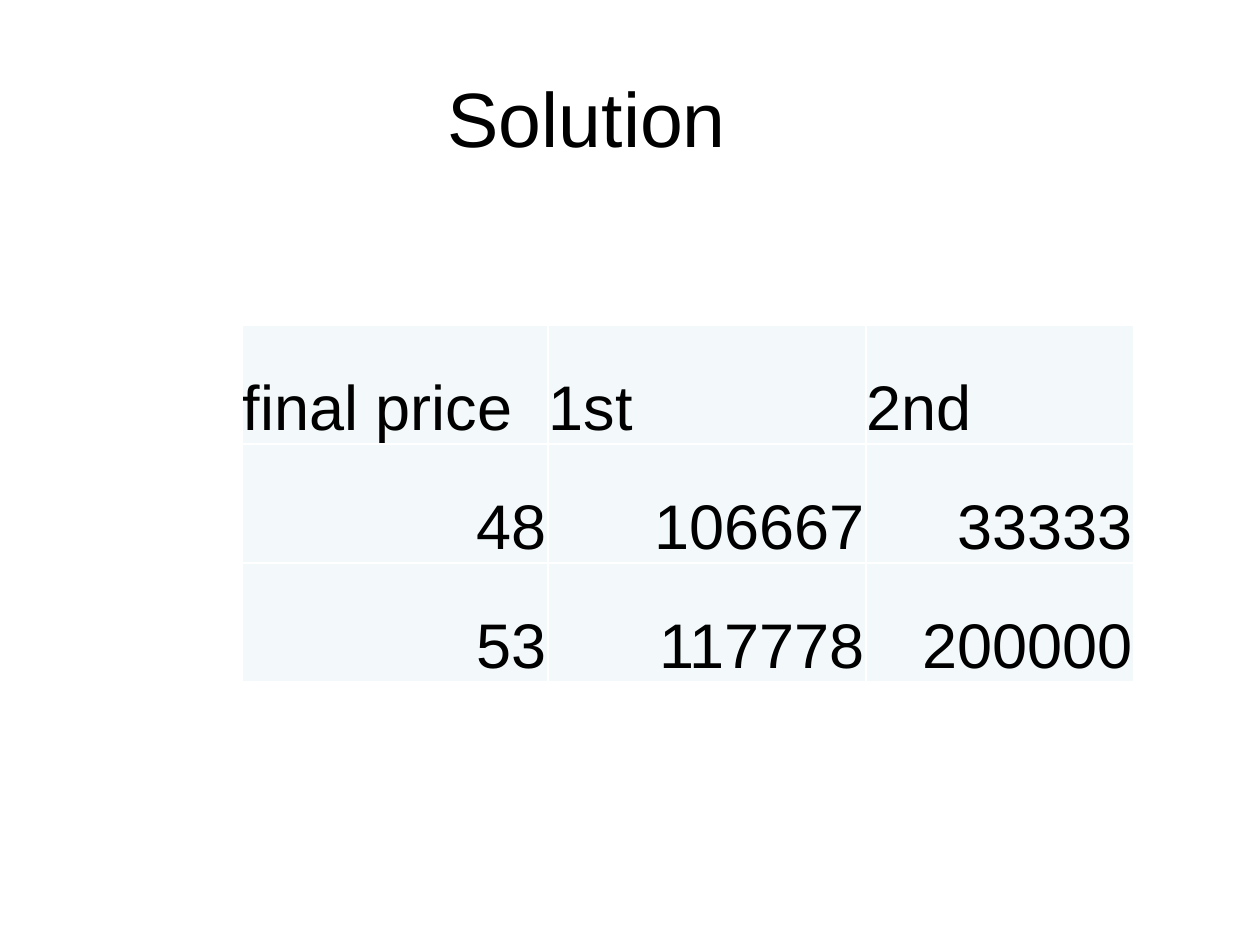
from dataclasses import dataclass

from lxml import etree
from pptx import Presentation
from pptx.dml.color import RGBColor
from pptx.enum.text import MSO_ANCHOR, PP_ALIGN
from pptx.oxml.ns import qn
from pptx.util import Emu, Pt

LEFT, CENTER, RIGHT = PP_ALIGN.LEFT, PP_ALIGN.CENTER, PP_ALIGN.RIGHT
MIDDLE, BOTTOM = MSO_ANCHOR.MIDDLE, MSO_ANCHOR.BOTTOM

PX_PER_INCH = 126
FONT = "Arial"
COLORS = {"text": "000000", "cell": "F3F9FA", "border": "FFFFFF"}
BORDER_SIDES = ("a:lnL", "a:lnR", "a:lnT", "a:lnB")
BORDER_WIDTH = Pt(1)

COLUMN_WIDTHS = (306, 318, 268)
ROW_HEIGHT = 119


@dataclass(frozen=True)
class PriceRow:
    values: tuple[str, str, str]
    align: PP_ALIGN = RIGHT


PRICE_ROWS = (
    PriceRow(("final price", "1st", "2nd"), LEFT),
    PriceRow(("48", "106667", "33333")),
    PriceRow(("53", "117778", "200000")),
)


def px(length: int) -> Emu:
    return Emu(round(length * 914400 / PX_PER_INCH))


def write(paragraph, text: str, size: int, align: PP_ALIGN) -> None:
    paragraph.alignment = align
    run = paragraph.add_run()
    run.text = text
    run.font.name = FONT
    run.font.size = Pt(size)
    run.font.color.rgb = RGBColor.from_string(COLORS["text"])


def add_heading(slide, text: str) -> None:
    heading = slide.shapes.add_textbox(px(63), px(38), px(1134), px(158))
    frame = heading.text_frame
    frame.word_wrap = True
    frame.vertical_anchor = MIDDLE
    frame.margin_left, frame.margin_right = px(13), px(99)
    write(frame.paragraphs[0], text, 44, CENTER)


def add_borders(cell) -> None:
    properties = cell._tc.get_or_add_tcPr()
    for position, side in enumerate(BORDER_SIDES):
        line = etree.Element(qn(side), w=str(BORDER_WIDTH))
        fill = etree.SubElement(line, qn("a:solidFill"))
        etree.SubElement(fill, qn("a:srgbClr"), val=COLORS["border"])
        properties.insert(position, line)


def fill_cell(cell, text: str, align: PP_ALIGN) -> None:
    cell.fill.solid()
    cell.fill.fore_color.rgb = RGBColor.from_string(COLORS["cell"])
    cell.vertical_anchor = BOTTOM
    cell.margin_left = cell.margin_right = cell.margin_top = px(1)
    cell.margin_bottom = 0
    write(cell.text_frame.paragraphs[0], text, 36, align)
    add_borders(cell)


def add_price_table(slide, rows: tuple[PriceRow, ...]) -> None:
    prices = slide.shapes.add_table(
        len(rows), len(COLUMN_WIDTHS), px(242), px(325),
        px(sum(COLUMN_WIDTHS)), px(ROW_HEIGHT * len(rows)),
    ).table
    for column, width in zip(prices.columns, COLUMN_WIDTHS):
        column.width = px(width)
    for table_row, price_row in zip(prices.rows, rows):
        table_row.height = px(ROW_HEIGHT)
        for cell, value in zip(table_row.cells, price_row.values):
            fill_cell(cell, value, price_row.align)


def main() -> None:
    presentation = Presentation()
    presentation.slide_width, presentation.slide_height = px(1260), px(945)
    slide = presentation.slides.add_slide(presentation.slide_layouts[6])
    add_heading(slide, "Solution")
    add_price_table(slide, PRICE_ROWS)
    presentation.save("out.pptx")


if __name__ == "__main__":
    main()
